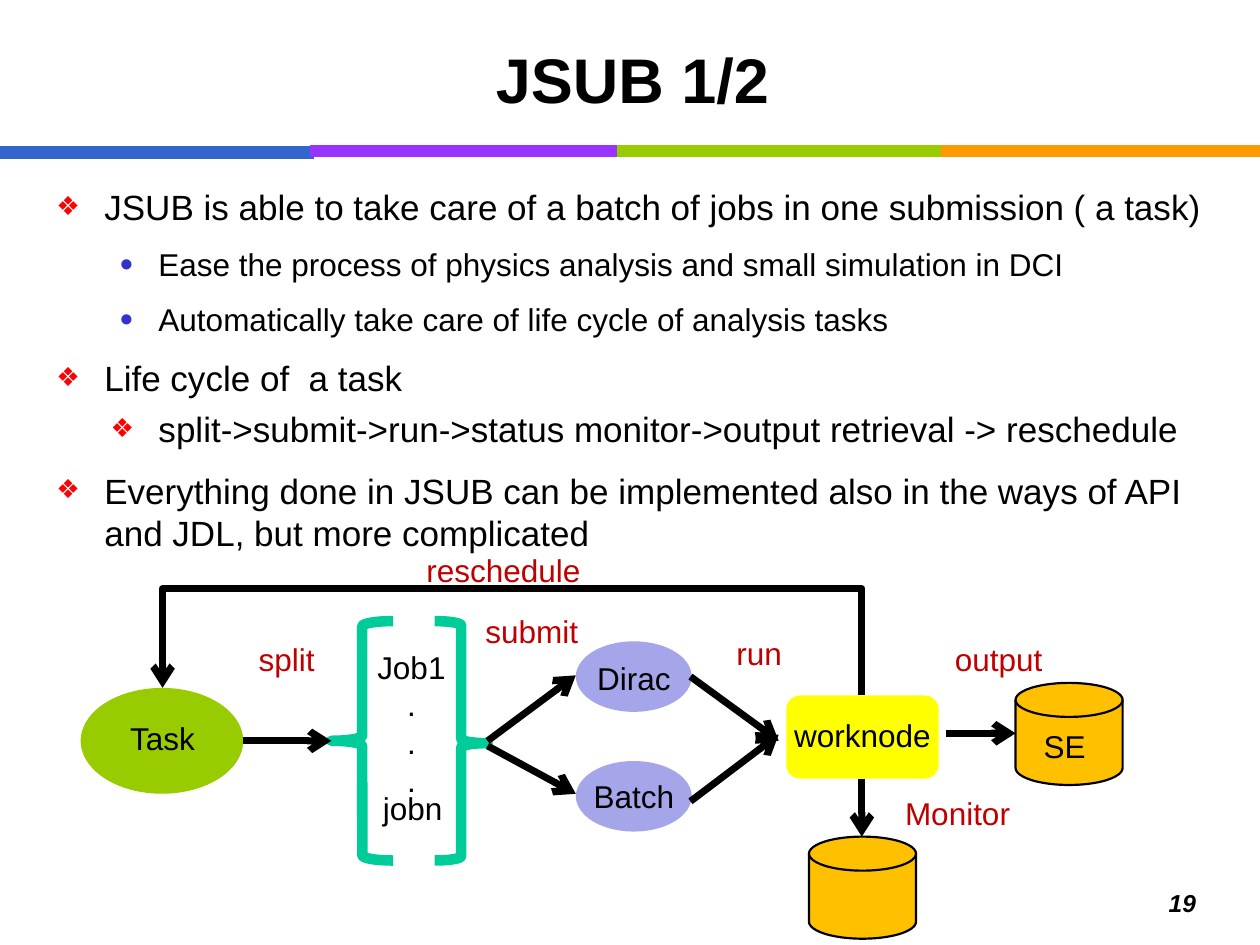
from dataclasses import dataclass

from lxml.etree import SubElement
from pptx import Presentation
from pptx.dml.color import RGBColor
from pptx.enum.shapes import MSO_CONNECTOR as Link, MSO_SHAPE as Shape
from pptx.enum.text import MSO_ANCHOR as Anchor, PP_ALIGN as Align
from pptx.oxml.ns import qn
from pptx.util import Inches, Pt


@dataclass(frozen=True)
class Theme:
    font: str = "Arial"
    title: int = 36
    body: int = 20
    label: int = 18
    number: int = 14
    black: str = "000000"
    action: str = "C00000"
    diamond: str = "FF0000"
    dot: str = "3333CC"
    blue: str = "3366CC"
    violet: str = "9933FF"
    green: str = "99CC00"
    orange: str = "FF9900"
    lilac: str = "A5A5E9"
    yellow: str = "FFFF00"
    gold: str = "FFC000"
    teal: str = "00CC99"


THEME = Theme()


def color(value):
    return RGBColor.from_string(value)


def add_text(page, place, lines, size=THEME.label, ink=THEME.black,
             align=Align.CENTER, anchor=Anchor.TOP, bold=False, italic=False):
    box = page.shapes.add_textbox(*map(Inches, place))
    frame = box.text_frame
    frame.word_wrap = True
    frame.vertical_anchor = anchor
    frame.text = lines
    for para in frame.paragraphs:
        para.alignment = align
        for span in para.runs:
            font = span.font
            font.name, font.size = THEME.font, Pt(size)
            font.bold, font.italic = bold, italic
            font.color.rgb = color(ink)
    return box


def add_bullet(para, mark, ink, left, hanging):
    props = para._p.get_or_add_pPr()
    props.set("marL", str(Inches(left)))
    props.set("indent", str(-Inches(hanging)))
    bullet_color = SubElement(props, qn("a:buClr"))
    SubElement(bullet_color, qn("a:srgbClr"), val=ink)
    SubElement(props, qn("a:buSzPct"), val="75000")
    SubElement(props, qn("a:buFont"), typeface=THEME.font)
    SubElement(props, qn("a:buChar"), char=mark)


def add_body(page):
    diamond = ("❖", THEME.diamond, 0.38, 0.38)
    inner_diamond = ("❖", THEME.diamond, 0.81, 0.38)
    dot = ("●", THEME.dot, 0.81, 0.31)
    # wording, bullet, type size, space before
    points = [
        ("JSUB is able to take care of a batch of jobs in one submission ( a task)",
         diamond, THEME.body, 0),
        ("Ease the process of physics analysis and small simulation in DCI",
         dot, THEME.label, 10),
        ("Automatically take care of life cycle of analysis tasks",
         dot, THEME.label, 10),
        ("Life cycle of  a task", diamond, THEME.body, 11),
        ("split->submit->run->status monitor->output retrieval -> reschedule",
         inner_diamond, THEME.body, 5),
        ("Everything done in JSUB can be implemented also in the ways of API "
         "and JDL, but more complicated", diamond, THEME.body, 11),
    ]
    wording = "\n".join(point[0] for point in points)
    box = add_text(page, (0.35, 1.42, 9.33, 3.1), wording, align=Align.LEFT)
    for para, (_, bullet, size, space) in zip(box.text_frame.paragraphs, points):
        para.space_before = Pt(space)
        add_bullet(para, *bullet)
        para.runs[0].font.size = Pt(size)


def add_figure(page, kind, place, fill=None, line=None, width=0):
    figure = page.shapes.add_shape(kind, *map(Inches, place))
    figure.shadow.inherit = False
    if fill:
        figure.fill.solid()
        figure.fill.fore_color.rgb = color(fill)
    else:
        figure.fill.background()
    if line:
        figure.line.color.rgb = color(line)
        figure.line.width = Pt(width)
    else:
        figure.line.fill.background()
    return figure


def add_line(page, start, end, ink, width, kind=Link.STRAIGHT):
    line = page.shapes.add_connector(kind, *map(Inches, start + end))
    line.line.color.rgb = color(ink)
    line.line.width = Pt(width)
    SubElement(line._element.spPr, qn("a:effectLst"))
    return line


def add_arrow(page, start, end, kind=Link.STRAIGHT):
    arrow = add_line(page, start, end, THEME.black, 4, kind)
    SubElement(arrow.line._get_or_add_ln(), qn("a:tailEnd"), type="arrow")
    return arrow


def add_return_arrow(page, start, end, top):
    """Arrow that rises from start to top, runs left and drops onto end."""
    rise = start[1] - end[1]
    middle_x, middle_y = (start[0] + end[0]) / 2, (start[1] + end[1]) / 2
    half_span = (start[0] - end[0]) / 2
    # A quarter turn lays the upright connector on its side.
    arrow = add_arrow(page, (middle_x - rise / 2, middle_y + half_span),
                      (middle_x + rise / 2, middle_y - half_span), Link.ELBOW)
    props = arrow._element.spPr
    props.find(qn("a:xfrm")).set("rot", str(270 * 60000))
    bend = round((start[1] - top) / rise * 100000)
    SubElement(props.find(qn("a:prstGeom")).find(qn("a:avLst")), qn("a:gd"),
               name="adj1", fmla=f"val {bend}")


def add_rule(page):
    for left, right, y, ink in [
        (0, 2.49, 1.21, THEME.blue),
        (2.46, 4.95, 1.2, THEME.violet),
        (7.43, 10, 1.2, THEME.orange),
        (4.9, 7.47, 1.2, THEME.green),
    ]:
        add_line(page, (left, y), (right, y), ink, 7)


def add_workflow(page):
    add_figure(page, Shape.OVAL, (0.64, 5.46, 1.29, 0.84), THEME.green)
    add_figure(page, Shape.LEFT_BRACE, (2.63, 4.93, 0.49, 1.9),
               line=THEME.teal, width=6)
    brace = add_figure(page, Shape.RIGHT_BRACE, (3.45, 4.93, 0.42, 1.9),
                       line=THEME.teal, width=6)
    brace.adjustments[0], brace.adjustments[1] = 0.08, 0.51
    for top in (5.09, 6.04):
        add_figure(page, Shape.OVAL, (4.57, top, 0.92, 0.56), THEME.lilac)
    add_figure(page, Shape.ROUNDED_RECTANGLE, (6.24, 5.52, 1.21, 0.66), THEME.yellow)
    for left, top in [(6.42, 6.64), (8.06, 5.42)]:
        add_figure(page, Shape.FLOWCHART_MAGNETIC_DISK, (left, top, 0.85, 0.81),
                   THEME.gold, THEME.black, 1.25)

    for start, end in [
        ((1.93, 5.88), (2.63, 5.88)),
        ((3.87, 5.88), (4.57, 5.36)),
        ((3.87, 5.92), (4.57, 6.3)),
        ((5.48, 5.37), (6.18, 5.88)),
        ((5.48, 6.36), (6.18, 5.83)),
        ((7.51, 5.82), (8.06, 5.82)),
        ((6.84, 6.18), (6.84, 6.64)),
    ]:
        add_arrow(page, start, end)
    add_return_arrow(page, (6.84, 5.52), (1.29, 5.46), 4.67)

    add_text(page, (2.87, 5.09, 0.79, 1.26), "Job1\n.\n.\n.")
    for wording, left, top, width, ink in [
        ("Task", 0.85, 5.66, 0.88, THEME.black),
        ("jobn", 2.88, 6.21, 0.79, THEME.black),
        ("Dirac", 4.57, 5.18, 0.92, THEME.black),
        ("Batch", 4.57, 6.12, 0.92, THEME.black),
        ("worknode", 6.18, 5.63, 1.33, THEME.black),
        ("SE", 8.15, 5.72, 0.6, THEME.black),
        ("split", 1.93, 5.03, 0.69, THEME.action),
        ("submit", 3.71, 4.81, 1.02, THEME.action),
        ("run", 5.68, 4.98, 0.69, THEME.action),
        ("output", 7.4, 5.03, 1.05, THEME.action),
        ("Monitor", 7.05, 6.25, 1.1, THEME.action),
        ("reschedule", 3.27, 4.32, 1.45, THEME.action),
    ]:
        add_text(page, (left, top, width, 0.39), wording, ink=ink)


def main():
    deck = Presentation()
    deck.slide_width, deck.slide_height = Inches(10), Inches(7.5)
    page = deck.slides.add_slide(deck.slide_layouts[6])
    add_rule(page)
    add_text(page, (0.34, 0.25, 9.36, 0.72), "JSUB 1/2", THEME.title,
             anchor=Anchor.BOTTOM, bold=True)
    add_body(page)
    add_workflow(page)
    add_text(page, (7.51, 7, 2.08, 0.42), "19", THEME.number,
             align=Align.RIGHT, bold=True, italic=True)
    deck.save("out.pptx")


if __name__ == "__main__":
    main()
